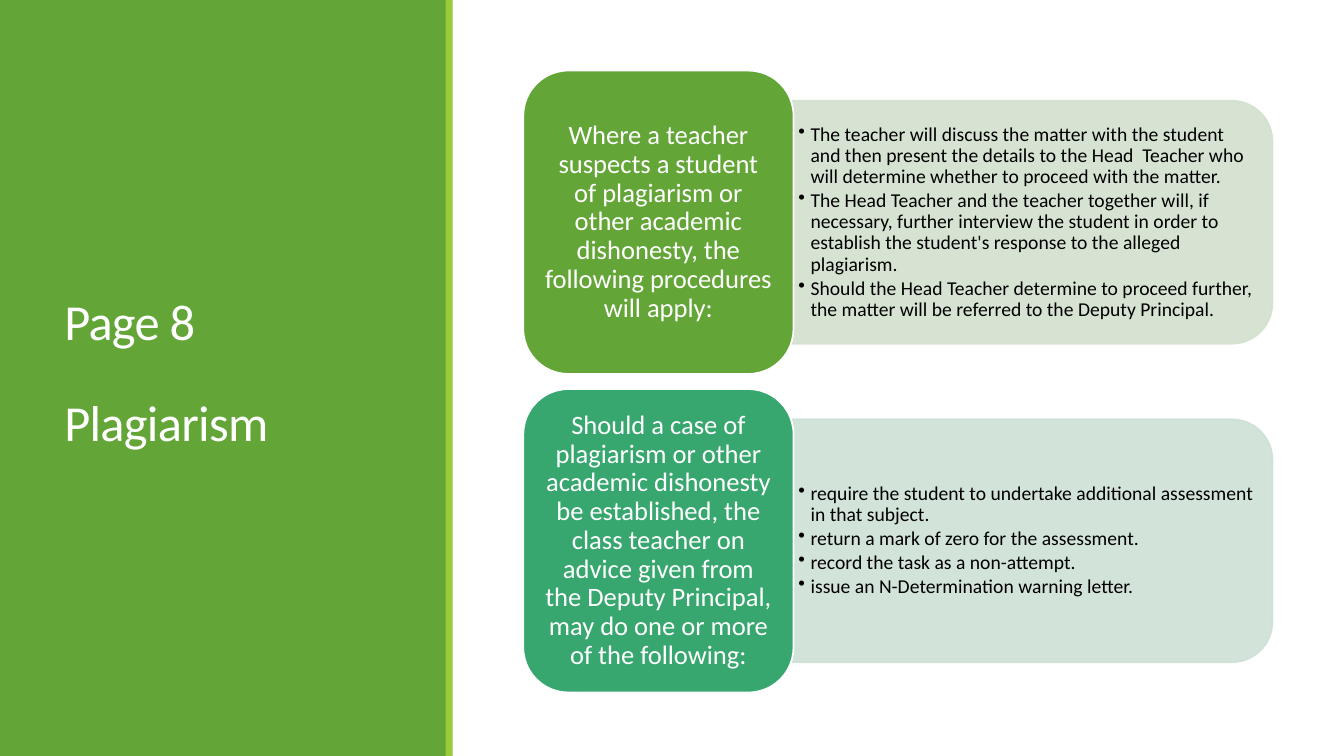
import pptx
import pptx.dml.color
import pptx.enum.shapes
import pptx.enum.text
import pptx.oxml.ns
import pptx.util
from lxml import etree

Inches = pptx.util.Inches
Pt = pptx.util.Pt
RGBColor = pptx.dml.color.RGBColor
SHAPE = pptx.enum.shapes.MSO_SHAPE
ALIGN = pptx.enum.text.PP_ALIGN
qn = pptx.oxml.ns.qn

WHITE = RGBColor(0xFF, 0xFF, 0xFF)
BLACK = RGBColor(0x00, 0x00, 0x00)
GREEN = RGBColor(0x63, 0xA5, 0x37)
LIME = RGBColor(0x99, 0xCB, 0x38)
TEAL = RGBColor(0x37, 0xA7, 0x6F)
PALE_GREEN = RGBColor(0xD3, 0xE1, 0xCE)
PALE_TEAL = RGBColor(0xCE, 0xE1, 0xD5)

CARD_TOP, CARD_STEP = 0.7, 3.16
CARD_LEFT, CARD_W, CARD_H = 5.19, 2.68, 3.01
PANEL_LEFT, PANEL_W, PANEL_H = 7.86, 4.76, 2.41
LIST_W, LIST_H = 4.64, 2.18

SECTIONS = [
    ("Where a teacher suspects a student of plagiarism or other academic "
     "dishonesty, the following procedures will apply:",
     GREEN, PALE_GREEN,
     ["The teacher will discuss the matter with the student and then present "
      "the details to the Head  Teacher who will determine whether to proceed "
      "with the matter.",
      "The Head Teacher and the teacher together will, if necessary, further "
      "interview the student in order to establish the student's response to "
      "the alleged plagiarism.",
      "Should the Head Teacher determine to proceed further, the matter will "
      "be referred to the Deputy Principal."]),
    ("Should a case of plagiarism or other academic dishonesty be established, "
     "the class teacher on advice given from the Deputy Principal, may do one "
     "or more of the following:",
     TEAL, PALE_TEAL,
     ["require the student to undertake additional assessment in that subject.",
      "return a mark of zero for the assessment.",
      "record the task as a non-attempt.",
      "issue an N-Determination warning letter."]),
]


class SlideBuilder:
    font = "Calibri"

    def __init__(self, slide):
        self.slide = slide

    def shape(self, kind, x, y, w, h, fill, line=None):
        sp = self.slide.shapes.add_shape(
            kind, Inches(x), Inches(y), Inches(w), Inches(h))
        sp.shadow.inherit = False
        sp.fill.solid()
        sp.fill.fore_color.rgb = fill
        if line is None:
            sp.line.fill.background()
        else:
            sp.line.color.rgb = line
            sp.line.width = Pt(1.25)
        return sp

    def textbox(self, x, y, w, h):
        return self.slide.shapes.add_textbox(
            Inches(x), Inches(y), Inches(w), Inches(h))

    def frame(self, sp, inset_x, inset_y):
        """Prepare a wrapped, vertically centred text frame."""
        tf = sp.text_frame
        tf.word_wrap = True
        tf.vertical_anchor = pptx.enum.text.MSO_ANCHOR.MIDDLE
        tf.margin_left = tf.margin_right = Inches(inset_x)
        tf.margin_top = tf.margin_bottom = Inches(inset_y)
        return tf

    def paragraphs(self, tf, texts, size, color, align=ALIGN.LEFT, spacing=0.9):
        for i, text in enumerate(texts):
            p = tf.add_paragraph() if i else tf.paragraphs[0]
            p.alignment = align
            p.line_spacing = spacing
            r = p.add_run()
            r.text = text
            r.font.name = self.font
            r.font.size = Pt(size)
            r.font.color.rgb = color
        return tf.paragraphs

    def title(self, lines):
        tf = self.frame(self.textbox(0.54, 0.57, 3.37, 6.31), 0.1, 0.05)
        paragraphs = self.paragraphs(tf, lines, 36, WHITE, spacing=0.85)
        for p in paragraphs:
            p.runs[0].font._element.set("spc", "-50")
        for p in paragraphs[1:]:
            p.space_before = Pt(36)

    def panel(self, center_y, color):
        """Pale panel, turned so that its rounded corners face right."""
        center_x = PANEL_LEFT + PANEL_W / 2
        sp = self.shape(SHAPE.ROUND_2_SAME_RECTANGLE,
                        center_x - PANEL_H / 2, center_y - PANEL_W / 2,
                        PANEL_H, PANEL_W, color, color)
        sp.rotation = 90
        for clr in sp._element.spPr.iter(qn("a:srgbClr")):
            etree.SubElement(clr, qn("a:alpha")).set("val", "90000")

    def bullets(self, center_y, items):
        sp = self.textbox(PANEL_LEFT, center_y - LIST_H / 2, LIST_W, LIST_H)
        tf = self.frame(sp, 0.06, 0.03)
        for p in self.paragraphs(tf, items, 14, BLACK):
            p.level = 1
            p.space_after = Pt(2)
            pPr = p._p.get_or_add_pPr()
            pPr.set("marL", str(Inches(0.12)))
            pPr.set("indent", str(-Inches(0.12)))
            etree.SubElement(pPr, qn("a:buChar")).set("char", "•")

    def card(self, top, text, color):
        sp = self.shape(SHAPE.ROUNDED_RECTANGLE, CARD_LEFT, top,
                        CARD_W, CARD_H, color, WHITE)
        tf = self.frame(sp, 0.08, 0.04)
        self.paragraphs(tf, [text], 19, WHITE, ALIGN.CENTER)


def main():
    prs = pptx.Presentation()
    prs.slide_width, prs.slide_height = Inches(13.33), Inches(7.5)
    s = SlideBuilder(prs.slides.add_slide(prs.slide_layouts[6]))

    s.shape(SHAPE.RECTANGLE, 0, 0, 4.43, 7.5, GREEN)
    s.title(["Page 8", "Plagiarism"])
    s.shape(SHAPE.RECTANGLE, 4.42, 0, 0.07, 7.5, LIME)

    for i, (heading, color, pale, items) in enumerate(SECTIONS):
        top = CARD_TOP + i * CARD_STEP
        center_y = top + CARD_H / 2
        s.panel(center_y, pale)
        s.bullets(center_y, items)
        s.card(top, heading, color)

    prs.save("out.pptx")


if __name__ == "__main__":
    main()
